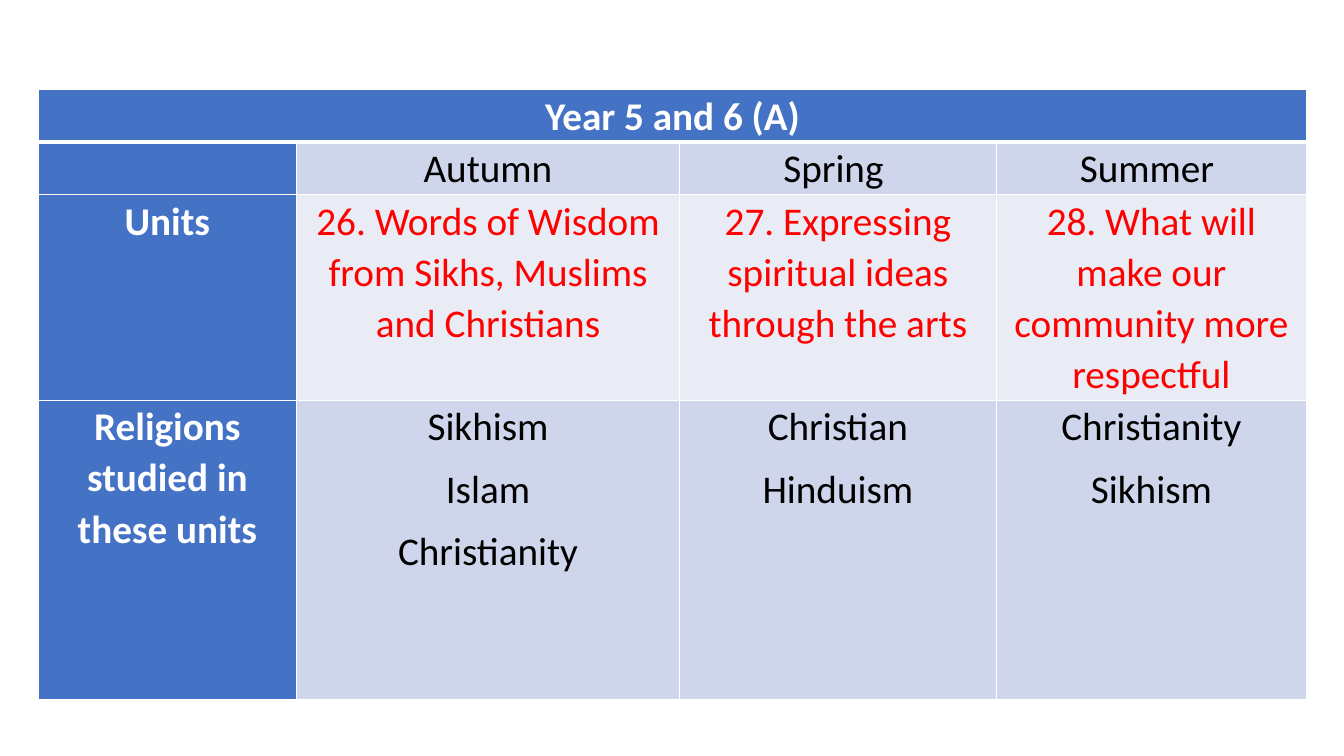
"""Build a slide with the Year 5 and 6 religious education plan."""
from dataclasses import dataclass

from lxml.etree import SubElement
from pptx import Presentation
from pptx.dml.color import RGBColor as Rgb
from pptx.enum.text import MSO_ANCHOR as Anchor, PP_ALIGN as Align
from pptx.oxml.ns import qn
from pptx.util import Inches, Pt


@dataclass(frozen=True)
class Theme:
    """Colours, type and line sizes of the slide."""
    heading_fill: str = "4472C4"
    dark_band: str = "CFD5EA"
    light_band: str = "E9EBF5"
    heading_text: str = "FFFFFF"
    body_text: str = "000000"
    unit_text: str = "FF0000"
    border: str = "FFFFFF"
    font: str = "Calibri"
    size: int = 28
    thin: int = 1
    thick: int = 3


THEME = Theme()
SLIDE_SIZE = (13.33, 7.5)
TABLE_ORIGIN = (0.38, 0.89)
COLUMNS = (2.56, 3.8, 3.14, 3.08)
ROWS = (0.52, 0.52, 2.04, 2.97)
TITLE = "Year 5 and 6 (A)"
PLAN = (
    ("", ("Autumn", "Spring ", "Summer "), THEME.dark_band, THEME.body_text),
    ("Units", (
        "26. Words of Wisdom from Sikhs, Muslims and Christians",
        "27. Expressing spiritual ideas through the arts",
        "28. What will make our community more respectful",
    ), THEME.light_band, THEME.unit_text),
    ("Religions studied in these units", (
        "Sikhism\nIslam\nChristianity",
        "Christian\nHinduism",
        "Christianity\nSikhism",
    ), THEME.dark_band, THEME.body_text),
)


def set_borders(cell, top, bottom):
    """Draw the four borders of a cell, with the given top and bottom widths."""
    properties = cell._tc.get_or_add_tcPr()
    widths = {"L": THEME.thin, "R": THEME.thin, "T": top, "B": bottom}
    for side, width in widths.items():
        line = SubElement(properties, qn(f"a:ln{side}"), w=str(Pt(width)))
        fill = SubElement(line, qn("a:solidFill"))
        SubElement(fill, qn("a:srgbClr"), val=THEME.border)


def write_cell(cell, text, fill, colour, bold=False):
    """Fill a cell and write its lines as centred paragraphs."""
    cell.fill.solid()
    cell.fill.fore_color.rgb = Rgb.from_string(fill)
    cell.margin_left = cell.margin_right = Inches(0.07)
    cell.margin_top = cell.margin_bottom = 0
    cell.vertical_anchor = Anchor.TOP
    frame = cell.text_frame
    for index, line in enumerate(text.splitlines()):
        paragraph = frame.add_paragraph() if index else frame.paragraphs[0]
        paragraph.alignment = Align.CENTER
        paragraph.line_spacing = 1.07
        paragraph.space_after = Pt(8)
        run = paragraph.add_run()
        run.text = line
        run.font.name = THEME.font
        run.font.size = Pt(THEME.size)
        run.font.bold = bold
        run.font.color.rgb = Rgb.from_string(colour)


def write_heading(cell, text):
    """Write a bold heading cell."""
    write_cell(cell, text, THEME.heading_fill, THEME.heading_text, bold=True)


def add_grid(slide):
    """Add the empty table with its column widths, row heights and borders."""
    left, top = map(Inches, TABLE_ORIGIN)
    table = slide.shapes.add_table(
        len(ROWS), len(COLUMNS), left, top,
        Inches(sum(COLUMNS)), Inches(sum(ROWS))).table
    for column, width in zip(table.columns, COLUMNS):
        column.width = Inches(width)
    for index, (row, height) in enumerate(zip(table.rows, ROWS)):
        row.height = Inches(height)
        for cell in row.cells:
            set_borders(cell,
                        top=THEME.thick if index == 1 else THEME.thin,
                        bottom=THEME.thick if index == 0 else THEME.thin)
    return table


def main():
    """Build and save the presentation."""
    presentation = Presentation()
    presentation.slide_width, presentation.slide_height = map(Inches, SLIDE_SIZE)
    slide = presentation.slides.add_slide(presentation.slide_layouts[6])
    table = add_grid(slide)
    table.cell(0, 0).merge(table.cell(0, len(COLUMNS) - 1))
    write_heading(table.cell(0, 0), TITLE)
    for row, (heading, terms, fill, colour) in enumerate(PLAN, start=1):
        write_heading(table.cell(row, 0), heading)
        for column, text in enumerate(terms, start=1):
            write_cell(table.cell(row, column), text, fill, colour)
    presentation.save("out.pptx")


if __name__ == "__main__":
    main()
